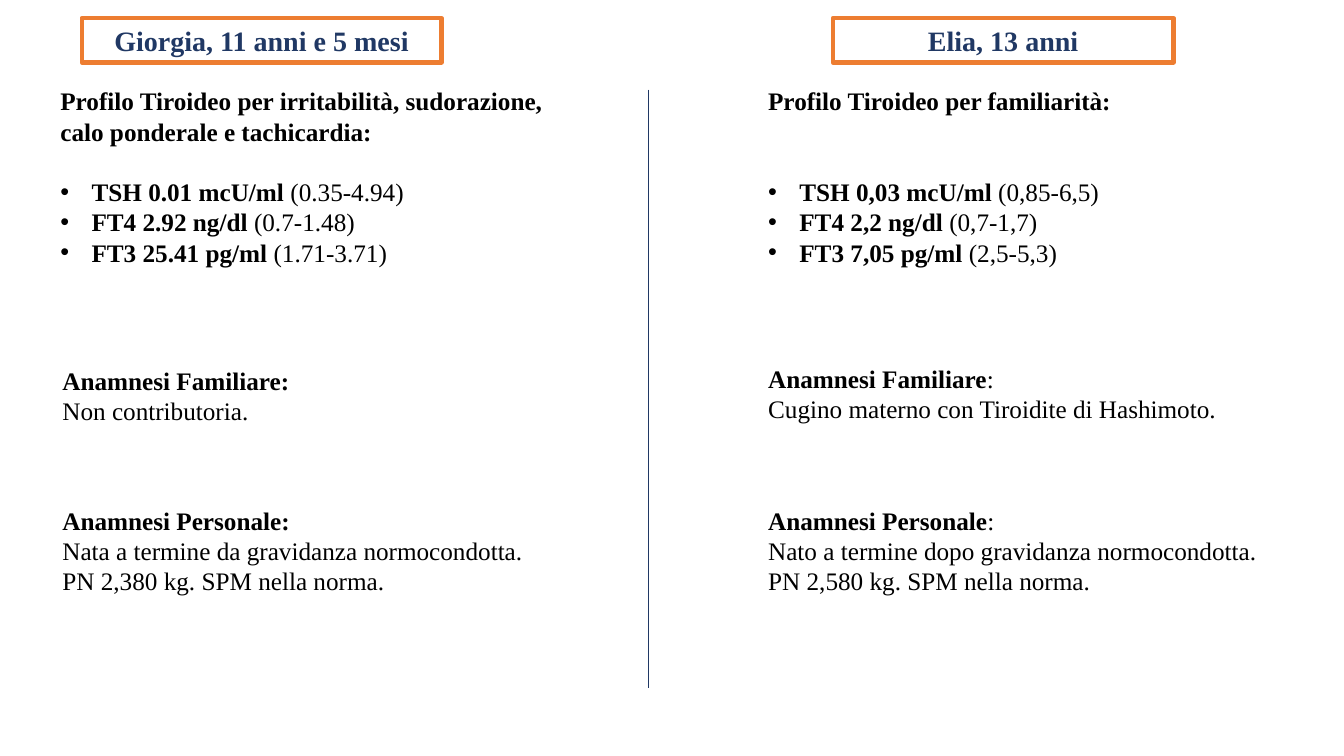
from lxml import etree
from pptx import Presentation
from pptx.dml.color import RGBColor
from pptx.enum.shapes import MSO_CONNECTOR, MSO_SHAPE
from pptx.enum.text import MSO_ANCHOR, MSO_AUTO_SIZE, PP_ALIGN
from pptx.oxml.ns import qn
from pptx.util import Inches, Pt

RECTANGLE = MSO_SHAPE.RECTANGLE
STRAIGHT = MSO_CONNECTOR.STRAIGHT
FIT_TEXT = MSO_AUTO_SIZE.SHAPE_TO_FIT_TEXT
CENTER, LEFT = PP_ALIGN.CENTER, PP_ALIGN.LEFT
MIDDLE, TOP = MSO_ANCHOR.MIDDLE, MSO_ANCHOR.TOP

NAVY, ORANGE, BLACK = "203864", "ED7D31", "000000"
LINE_HEIGHT = 21.6
BULLET_INDENT = Inches(0.31)
HEADER_TOP, HEADER_HEIGHT = 0.18, 0.44
PROFILE_TOP, PERSONAL_TOP = 0.8, 4.96

# Each paragraph is a pair: bold text, regular text
patients = [
    {
        "header": ("Giorgia, 11 anni e 5 mesi", 0.81, 3.57),
        "profile": "Profilo Tiroideo per irritabilità, sudorazione, calo ponderale e tachicardia:",
        "profile_left": 0.5,
        "blank_lines": 1,
        "tests": [
            ("TSH 0.01 mcU/ml ", "(0.35-4.94)"),
            ("FT4 2.92 ng/dl ", "(0.7-1.48)"),
            ("FT3 25.41 pg/ml ", "(1.71-3.71)"),
        ],
        "history_left": 0.52,
        "width": 5.11,
        "family_top": 3.57,
        "family": [("Anamnesi Familiare:", ""), ("", "Non contributoria.")],
        "personal": [
            ("Anamnesi Personale:", ""),
            ("", "Nata a termine da gravidanza normocondotta."),
            ("", "PN 2,380 kg. SPM nella norma."),
        ],
    },
    {
        "header": ("Elia, 13 anni", 8.26, 3.38),
        "profile": "Profilo Tiroideo per familiarità:",
        "profile_left": 7.52,
        "blank_lines": 2,
        "tests": [
            ("TSH 0,03 mcU/ml ", "(0,85-6,5)"),
            ("FT4 2,2 ng/dl ", "(0,7-1,7)"),
            ("FT3 7,05 pg/ml ", "(2,5-5,3)"),
        ],
        "history_left": 7.52,
        "width": 5.18,
        "family_top": 3.55,
        "family": [
            ("Anamnesi Familiare", ":"),
            ("", "Cugino materno con Tiroidite di Hashimoto."),
        ],
        "personal": [
            ("Anamnesi Personale", ":"),
            ("", "Nato a termine dopo gravidanza normocondotta. PN 2,580 kg. SPM nella norma."),
        ],
    },
]


def color(hex_value):
    return RGBColor.from_string(hex_value)


def write_text(shape, paragraphs, size=18, text_color=BLACK, alignment=LEFT, anchor=TOP):
    """Fill the shape with (bold, regular) paragraphs and return them."""
    frame = shape.text_frame
    frame_format = {"word_wrap": True, "auto_size": FIT_TEXT, "vertical_anchor": anchor}
    for name, value in frame_format.items():
        setattr(frame, name, value)
    for index, parts in enumerate(paragraphs):
        paragraph = frame.add_paragraph() if index else frame.paragraphs[0]
        paragraph.alignment = alignment
        for text, bold in zip(parts, (True, False)):
            if text:
                run = paragraph.add_run()
                run.text = text
                run.font.color.rgb = color(text_color)
                font_format = {"name": "Times New Roman", "size": Pt(size), "bold": bold}
                for name, value in font_format.items():
                    setattr(run.font, name, value)
    return frame.paragraphs


presentation = Presentation()
presentation.slide_width = Inches(13.33)
presentation.slide_height = Inches(7.5)
slide = presentation.slides.add_slide(presentation.slide_layouts[6])

for patient in patients:
    name, left, width = patient["header"]
    header = slide.shapes.add_shape(
        RECTANGLE, Inches(left), Inches(HEADER_TOP), Inches(width), Inches(HEADER_HEIGHT))
    header.shadow.inherit = False
    header.fill.background()
    header.line.color.rgb = color(ORANGE)
    header.line.width = Pt(3)
    write_text(header, [(name, "")], 20, NAVY, CENTER, MIDDLE)

    profile = slide.shapes.add_textbox(
        Inches(patient["profile_left"]), Inches(PROFILE_TOP), Inches(patient["width"]), Inches(1.92))
    tests = write_text(profile, [(patient["profile"], "")] + patient["tests"])[1:]
    tests[0].space_before = Pt(LINE_HEIGHT * patient["blank_lines"])
    for test in tests:
        properties = test._p.get_or_add_pPr()
        properties.set("marL", str(BULLET_INDENT))
        properties.set("indent", str(-BULLET_INDENT))
        etree.SubElement(properties, qn("a:buFont")).set("typeface", "Arial")
        etree.SubElement(properties, qn("a:buChar")).set("char", "•")

    histories = [
        (patient["family_top"], 0.71, patient["family"]),
        (PERSONAL_TOP, 1.01, patient["personal"]),
    ]
    for top, height, paragraphs in histories:
        history = slide.shapes.add_textbox(
            Inches(patient["history_left"]), Inches(top), Inches(patient["width"]), Inches(height))
        write_text(history, paragraphs)

divider = slide.shapes.add_connector(
    STRAIGHT, Inches(6.43), Inches(0.89), Inches(6.43), Inches(6.83))
divider.line.color.rgb = color(NAVY)
divider.line.width = Pt(1)
etree.SubElement(divider._element.spPr, qn("a:effectLst"))

presentation.save("out.pptx")
